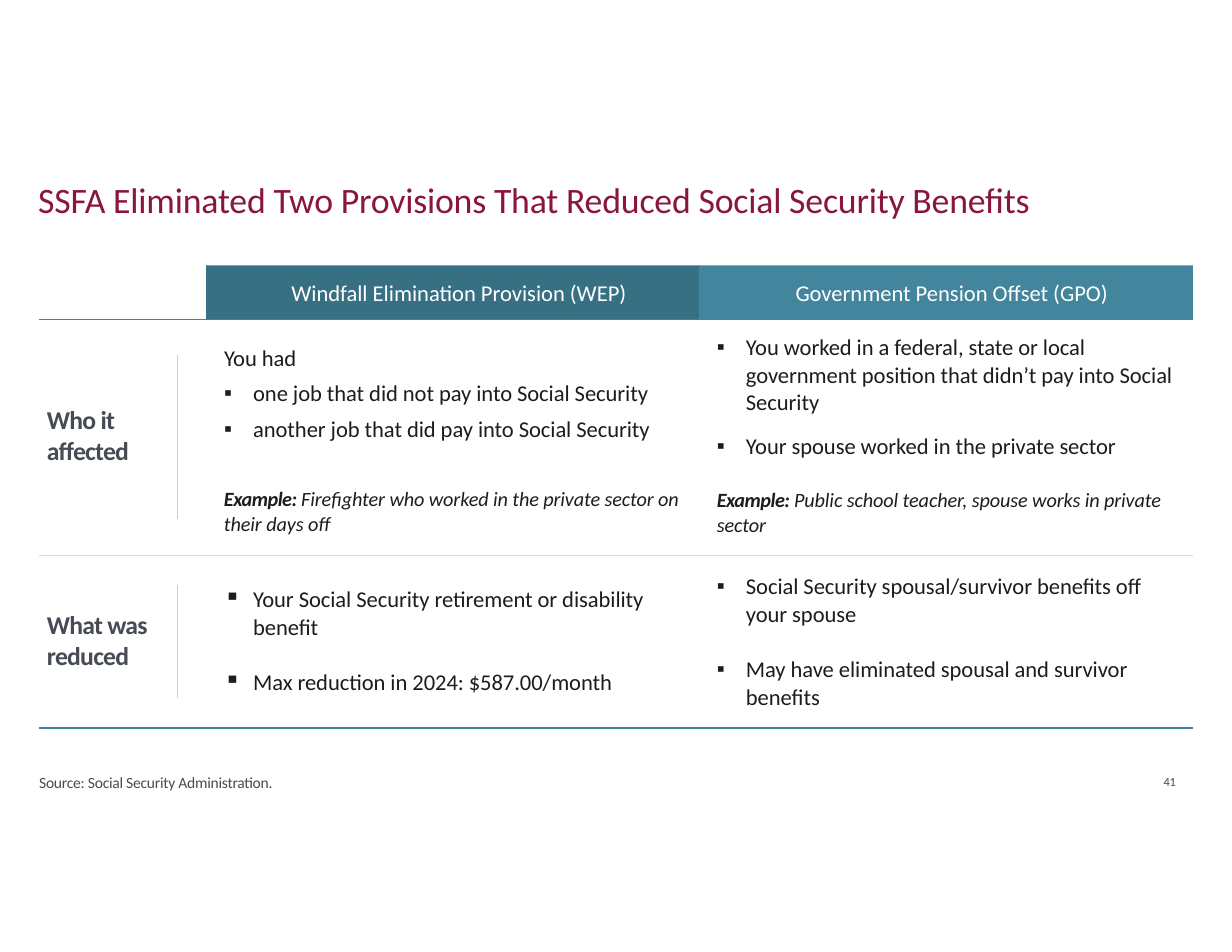
from lxml import etree
from pptx import Presentation
from pptx.dml.color import RGBColor
from pptx.enum.shapes import MSO_CONNECTOR, MSO_SHAPE
from pptx.enum.text import MSO_ANCHOR, MSO_AUTO_SIZE, PP_ALIGN
from pptx.oxml.ns import qn
from pptx.util import Inches, Pt

COLORS = {
    "title": "89163D",
    "wep": "387083",
    "gpo": "42859C",
    "body": "1D1D1D",
    "label": "464B54",
    "white": "FFFFFF",
    "row_rule": "D8D8D8",
    "label_rule": "CFCFD1",
}
FONT = "Calibri"
BULLET_INDENT = 0.26
TABLE_LEFT, TABLE_MIDDLE, TABLE_RIGHT = 0.35, 6.24, 10.65


def color(name):
    return RGBColor.from_string(COLORS[name])


def set_indent(paragraph, left, bullet=False):
    properties = paragraph._p.get_or_add_pPr()
    properties.set("marL", str(Inches(left)))
    properties.set("indent", str(Inches(-BULLET_INDENT) if bullet else 0))
    if bullet:
        etree.SubElement(properties, qn("a:buChar")).set("char", "▪")
    else:
        etree.SubElement(properties, qn("a:buNone"))


def format_run(run, size, color_name, bold=False, italic=False, tracking=0.0):
    font = run.font
    font.name, font.size = FONT, Pt(size)
    font.bold, font.italic = bold, italic
    font.color.rgb = color(color_name)
    run._r.get_or_add_rPr().set("spc", str(round(tracking * 100)))


def write_paragraph(paragraph, text, size=14.5, color_name="body", bold=False,
                    tracking=-0.05, before=0, spacing=1.0, bullet=False,
                    left=0.01, align=PP_ALIGN.LEFT):
    set_indent(paragraph, BULLET_INDENT + 0.01 if bullet else left, bullet)
    paragraph.alignment = align
    paragraph.space_before = Pt(before)
    paragraph.line_spacing = spacing
    paragraph.text = text
    format_run(paragraph.runs[0], size, color_name, bold, tracking=tracking)


def write_example(paragraph, text, before=0):
    write_paragraph(paragraph, "Example: ", before=before, spacing=1.02)
    format_run(paragraph.runs[0], 13, "body", True, True, -0.3)
    run = paragraph.add_run()
    run.text = text
    format_run(run, 13, "body", italic=True, tracking=-0.06)


def prepare_frame(shape, anchor=MSO_ANCHOR.TOP):
    frame = shape.text_frame
    frame.word_wrap = True
    frame.auto_size = MSO_AUTO_SIZE.NONE
    frame.vertical_anchor = anchor
    frame.margin_left = frame.margin_right = 0
    frame.margin_top = frame.margin_bottom = 0
    return frame


def place_placeholder(placeholder, left, top, width, height):
    placeholder.left, placeholder.top = Inches(left), Inches(top)
    placeholder.width, placeholder.height = Inches(width), Inches(height)
    return prepare_frame(placeholder)


def add_text(slide, left, top, width, height):
    box = slide.shapes.add_textbox(
        Inches(left), Inches(top), Inches(width), Inches(height))
    return prepare_frame(box)


def add_rule(slide, x1, y1, x2, y2, color_name, width):
    rule = slide.shapes.add_connector(
        MSO_CONNECTOR.STRAIGHT, Inches(x1), Inches(y1), Inches(x2), Inches(y2))
    rule.line.color.rgb = color(color_name)
    rule.line.width = Pt(width)
    etree.SubElement(rule._element.spPr, qn("a:effectLst"))


def add_header(slide, left, text, fill):
    header = slide.shapes.add_shape(
        MSO_SHAPE.RECTANGLE, Inches(left), Inches(2.37), Inches(4.41), Inches(0.48))
    header.shadow.inherit = False
    header.fill.solid()
    header.fill.fore_color.rgb = color(fill)
    header.line.fill.background()
    frame = prepare_frame(header, MSO_ANCHOR.MIDDLE)
    write_paragraph(frame.paragraphs[0], text, color_name="white", tracking=-0.03,
                    left=0.1, align=PP_ALIGN.CENTER)


def add_row_label(slide, text, top, rule_top, rule_bottom):
    frame = add_text(slide, 0.41, top, 1.1, 0.58)
    write_paragraph(frame.paragraphs[0], text, 16.5, "label", True, -0.45)
    add_rule(slide, 1.58, rule_top, 1.58, rule_bottom, "label_rule", 0.36)


def write_bullets(frame, items, first_paragraph=None, spacing=1.02):
    for index, (text, before) in enumerate(items):
        paragraph = first_paragraph if index == 0 and first_paragraph else frame.add_paragraph()
        write_paragraph(paragraph, text, before=before, spacing=spacing, bullet=True)


def add_wep_column(slide, body):
    affected = place_placeholder(body, 1.99, 3.07, 4.1, 0.9)
    write_paragraph(affected.paragraphs[0], "You had")
    write_bullets(affected, [
        ("one job that did not pay into Social Security", 5.4),
        ("another job that did pay into Social Security", 5.3),
    ], spacing=1.0)
    example = add_text(slide, 1.99, 4.34, 4.14, 0.47)
    write_example(example.paragraphs[0],
                  "Firefighter who worked in the private sector on their days off")
    reduced = add_text(slide, 1.99, 5.22, 3.83, 1.02)
    write_bullets(reduced, [
        ("Your Social Security retirement or disability benefit", 0),
        ("Max reduction in 2024: $587.00/month", 18),
    ], reduced.paragraphs[0])


def add_gpo_column(body):
    frame = place_placeholder(body, 6.39, 2.97, 4.16, 3.4)
    write_bullets(frame, [
        ("You worked in a federal, state or local government position "
         "that didn’t pay into Social Security", 0),
        ("Your spouse worked in the private sector", 10.3),
    ], frame.paragraphs[0])
    write_example(frame.add_paragraph(),
                  "Public school teacher, spouse works in private sector", 17.9)
    write_bullets(frame, [
        ("Social Security spousal/survivor benefits off your spouse", 22.7),
        ("May have eliminated spousal and survivor benefits", 17.8),
    ])


def main():
    presentation = Presentation()
    presentation.slide_width, presentation.slide_height = Inches(11), Inches(8.5)
    slide = presentation.slides.add_slide(presentation.slide_layouts[3])
    title, wep_body, gpo_body = slide.placeholders

    title_frame = place_placeholder(title, 0.33, 1.59, 10.34, 0.63)
    write_paragraph(title_frame.paragraphs[0],
                    "SSFA Eliminated Two Provisions That Reduced Social Security Benefits",
                    23, "title", tracking=-0.15)

    add_rule(slide, 1.84, 2.37, 1.84, 2.86, "row_rule", 0.6)
    for y, color_name, width in [(2.85, "gpo", 0.84), (4.96, "row_rule", 0.6),
                                 (6.5, "gpo", 0.84)]:
        add_rule(slide, TABLE_LEFT, y, TABLE_MIDDLE, y, color_name, width)
        add_rule(slide, TABLE_MIDDLE, y, TABLE_RIGHT, y, color_name, width)

    add_header(slide, 1.84, "Windfall Elimination Provision (WEP)", "wep")
    add_header(slide, TABLE_MIDDLE, "Government Pension Offset (GPO)", "gpo")
    add_row_label(slide, "Who it affected", 3.61, 3.17, 4.63)
    add_row_label(slide, "What was reduced", 5.44, 5.22, 6.23)
    add_wep_column(slide, wep_body)
    add_gpo_column(gpo_body)

    source = add_text(slide, 0.34, 6.92, 2.3, 0.17)
    write_paragraph(source.paragraphs[0], "Source: Social Security Administration.",
                    10, "label", tracking=-0.13, spacing=Pt(10.4))
    page_number = add_text(slide, 10.38, 6.92, 0.2, 0.17)
    write_paragraph(page_number.paragraphs[0], "41", 8, "label",
                    tracking=-0.2, spacing=Pt(8.8))
    presentation.save("out.pptx")


if __name__ == "__main__":
    main()
